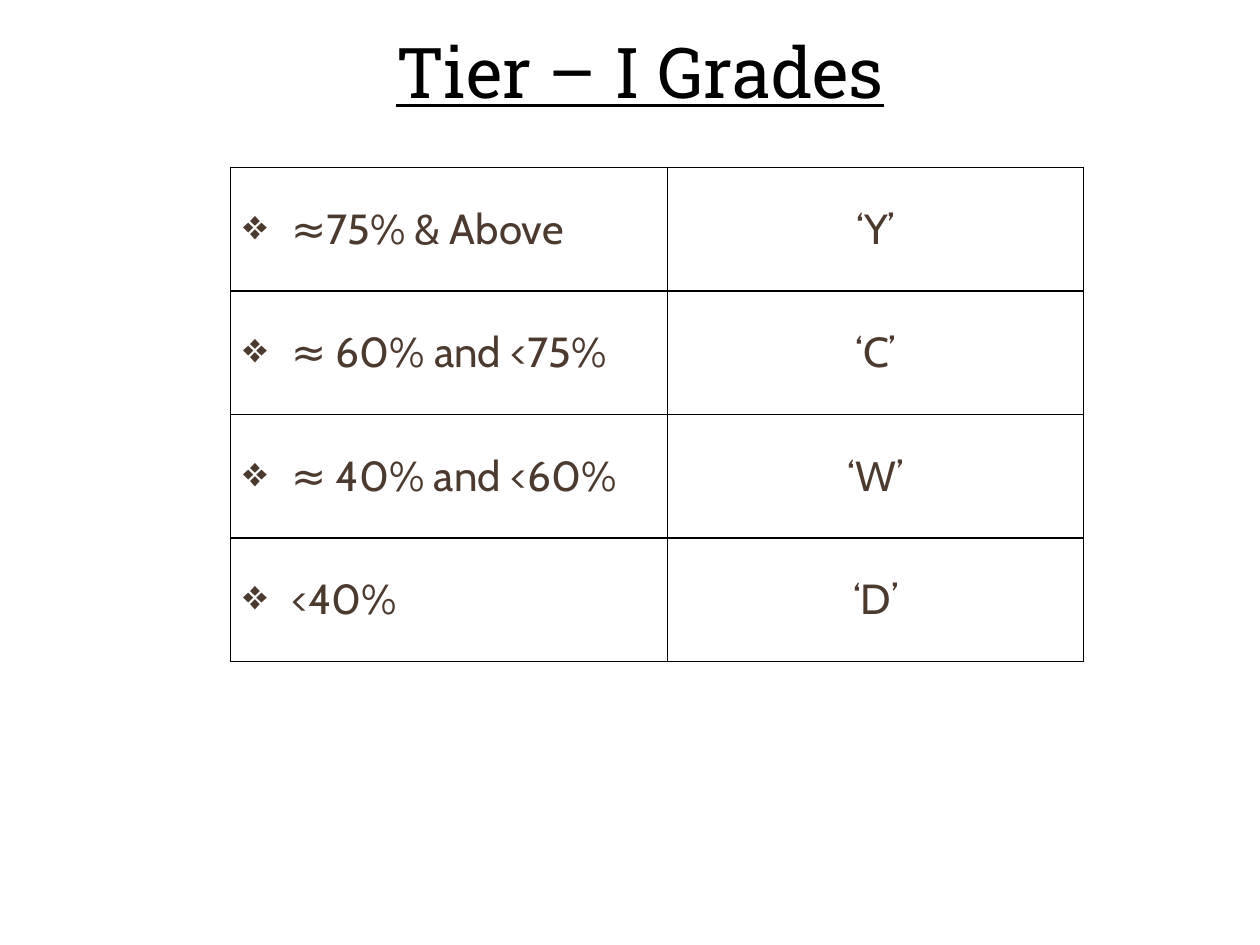
from dataclasses import dataclass
from lxml.etree import SubElement
from pptx import Presentation
from pptx.dml.color import RGBColor
from pptx.enum.text import MSO_ANCHOR as Anchor, PP_ALIGN as Align
from pptx.oxml.ns import qn
from pptx.util import Inches, Pt


@dataclass(frozen=True)
class Theme:
    ink: RGBColor = RGBColor(0, 0, 0)
    brown: RGBColor = RGBColor(0x4D, 0x3A, 0x2F)
    title_font: str = "Roboto Slab"
    body_font: str = "Cabin"
    title_size: int = 40
    body_size: int = 24
    border_width: int = 1


theme = Theme()


def write(frame, text, *, font=theme.body_font, size=theme.body_size,
          color=theme.brown, align=Align.LEFT, underline=False, bullet=None):
    frame.word_wrap = True
    para = frame.paragraphs[0]
    para.alignment = align
    span = para.add_run()
    span.text = text
    span.font.name = font
    span.font.size = Pt(size)
    span.font.color.rgb = color
    span.font.underline = underline
    if bullet:
        props = para._p.get_or_add_pPr()
        props.set("marL", str(Inches(0.38)))
        props.set("indent", str(-Inches(0.38)))
        SubElement(props, qn("a:buChar"), char=bullet)


def add_borders(cell):
    props = cell._tc.get_or_add_tcPr()
    for position, side in enumerate(("a:lnL", "a:lnR", "a:lnT", "a:lnB")):
        line = SubElement(props, qn(side), w=str(Pt(theme.border_width)))
        fill = SubElement(line, qn("a:solidFill"))
        SubElement(fill, qn("a:srgbClr"), val=str(theme.ink))
        props.insert(position, line)


deck = Presentation()
deck.slide_width = Inches(10)
deck.slide_height = Inches(7.5)
page = deck.slides.add_slide(deck.slide_layouts[6])

title = page.shapes.add_textbox(Inches(0.33), Inches(0.17), Inches(9.5), Inches(0.78))
title.text_frame.vertical_anchor = Anchor.MIDDLE
write(title.text_frame, "Tier – I Grades", font=theme.title_font,
      size=theme.title_size, color=theme.ink, align=Align.CENTER, underline=True)

grades = [
    ("≈75% & Above", "‘Y’"),
    ("≈ 60% and <75%", "‘C’"),
    ("≈ 40% and <60%", "‘W’"),
    ("<40%", "‘D’"),
]
column_widths = (3.47, 3.3)
row_height = 0.98
table = page.shapes.add_table(
    len(grades), len(column_widths), Inches(1.83), Inches(1.33),
    Inches(sum(column_widths)), Inches(row_height * len(grades))).table
table.first_row = False
table.horz_banding = False
for column, width in zip(table.columns, column_widths):
    column.width = Inches(width)

for row, (score, grade) in zip(table.rows, grades):
    row.height = Inches(row_height)
    score_cell, grade_cell = row.cells
    write(score_cell.text_frame, score, bullet="❖")
    write(grade_cell.text_frame, grade, align=Align.CENTER)
    for cell in row.cells:
        cell.vertical_anchor = Anchor.MIDDLE
        cell.fill.background()
        add_borders(cell)

deck.save("out.pptx")
